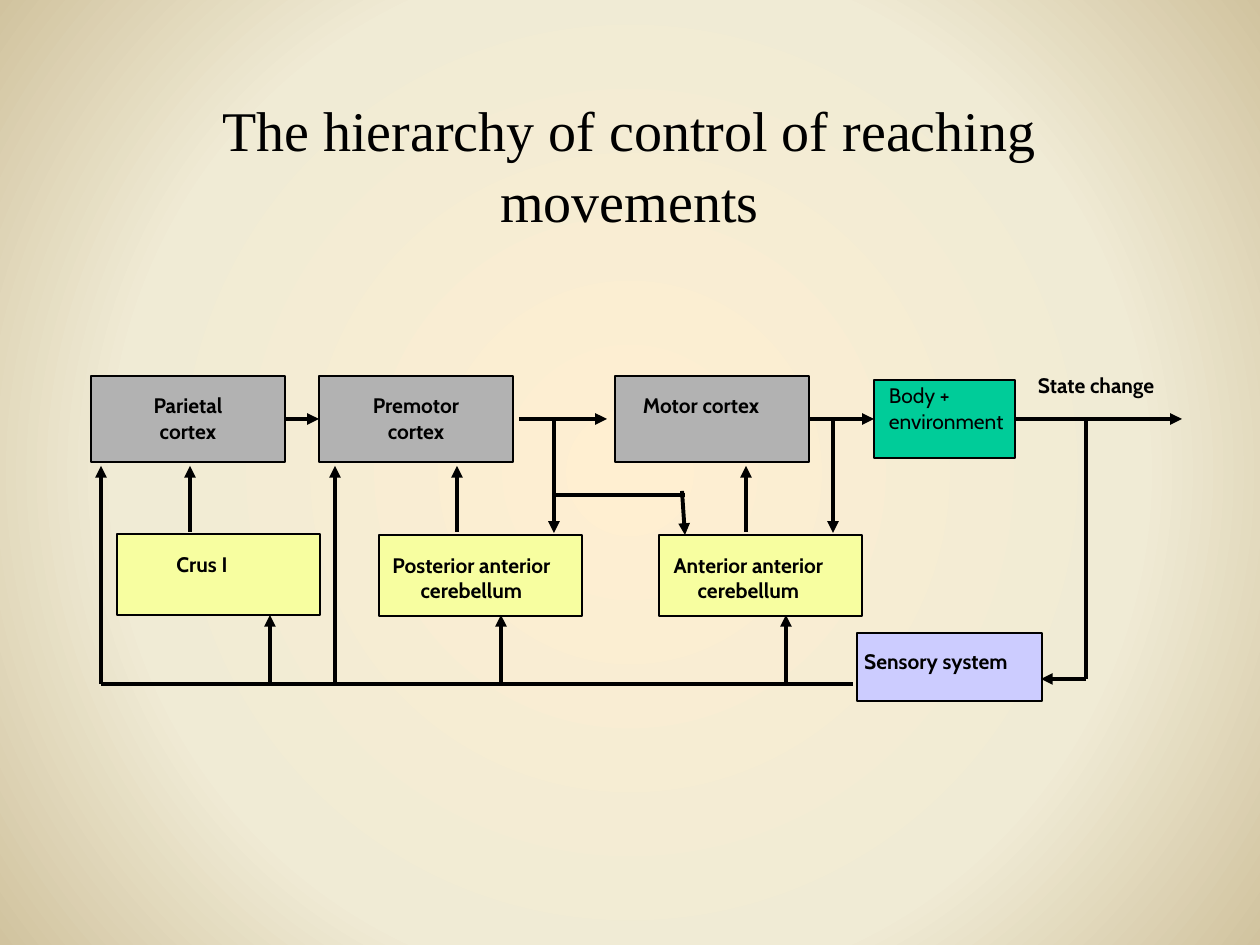
"""Build the slide on the hierarchy of control of reaching movements."""
import pptx
import pptx.dml.color
import pptx.enum.shapes
import pptx.enum.text
import pptx.oxml
import pptx.oxml.ns
import pptx.util

SCALE = 914400 / 126
THEME = {
    "ink": "000000",
    "cortex": "B2B2B2",
    "cerebellum": "F7FEA0",
    "body": "00CC99",
    "sensory": "CCCCFF",
    "backdrop": [(0, "FFEFD1"), (65, "F0EBD5"), (100, "D1C39F")],
    "title_font": "Times New Roman",
    "label_font": "Cabin",
    "title_size": 32,
    "label_size": 12,
    "outline": 0.75,
    "flow": 2.25,
}
CENTER = pptx.enum.text.PP_ALIGN.CENTER
LEFT = pptx.enum.text.PP_ALIGN.LEFT
TOP = pptx.enum.text.MSO_ANCHOR.TOP
MIDDLE = pptx.enum.text.MSO_ANCHOR.MIDDLE
TRUNK = 419
BUS = 684
NAMESPACE = pptx.oxml.ns.nsdecls("a")


def write(holder, lines, font, size, bold, align, anchor, insets):
    frame = holder.text_frame
    frame.word_wrap = True
    frame.vertical_anchor = anchor
    frame.margin_left, frame.margin_top, frame.margin_right, frame.margin_bottom = [
        round(inset * SCALE) for inset in insets
    ]
    for index, line in enumerate(lines):
        paragraph = frame.paragraphs[0] if index == 0 else frame.add_paragraph()
        paragraph.alignment = align
        run = paragraph.add_run()
        run.text = line
        run.font.name = THEME[font]
        run.font.size = pptx.util.Pt(THEME[size])
        run.font.bold = bold
        run.font.color.rgb = pptx.dml.color.RGBColor.from_string(THEME["ink"])
    return frame


def draw_flow(start, end, arrow):
    flow = slide.shapes.add_connector(
        pptx.enum.shapes.MSO_CONNECTOR.STRAIGHT,
        *[round(length * SCALE) for length in (*start, *end)],
    )
    flow.line.width = pptx.util.Pt(THEME["flow"])
    flow.line.color.rgb = pptx.dml.color.RGBColor.from_string(THEME["ink"])
    if arrow:
        flow.line._get_or_add_ln().append(
            pptx.oxml.parse_xml(f'<a:tailEnd {NAMESPACE} type="triangle"/>')
        )
    flow._element.spPr.append(pptx.oxml.parse_xml(f"<a:effectLst {NAMESPACE}/>"))
    return flow


presentation = pptx.Presentation()
presentation.slide_width = round(1260 * SCALE)
presentation.slide_height = round(945 * SCALE)
slide = presentation.slides.add_slide(presentation.slide_layouts[6])

backdrop = slide.background.fill
backdrop.solid()
backdrop.fore_color.rgb = pptx.dml.color.RGBColor.from_string(THEME["backdrop"][0][1])
stops = "".join(
    f'<a:gs pos="{position * 1000}"><a:srgbClr val="{color}"/></a:gs>'
    for position, color in THEME["backdrop"]
)
gradient = pptx.oxml.parse_xml(
    f'<a:gradFill {NAMESPACE} rotWithShape="1"><a:gsLst>{stops}</a:gsLst>'
    '<a:path path="circle"><a:fillToRect l="50000" t="50000" r="50000" b="50000"/>'
    "</a:path></a:gradFill>"
)
solid = slide.background._cSld.find(".//" + pptx.oxml.ns.qn("a:solidFill"))
solid.getparent().replace(solid, gradient)

title = slide.shapes.add_textbox(*[round(length * SCALE) for length in (94, 84, 1071, 158)])
title_frame = write(
    title, ["The hierarchy of control of reaching movements"],
    "title_font", "title_size", False, CENTER, MIDDLE, (6, 6, 6, 6),
)
title_frame.paragraphs[0].line_spacing = 1.05

stages = {}
for name, lines, kind, bounds, bold, align, insets in [
    ("parietal", ["Parietal", "cortex"], "cortex", (91, 376, 194, 86), True, CENTER, (0, 17, 0, 0)),
    ("premotor", ["Premotor", "cortex"], "cortex", (319, 376, 194, 86), True, CENTER, (0, 17, 0, 0)),
    ("motor", ["Motor cortex"], "cortex", (615, 376, 194, 86), True, CENTER, (0, 17, 22, 0)),
    ("body", ["Body +", "environment"], "body", (874, 380, 141, 78), False, LEFT, (15, 3, 0, 0)),
    ("crus", ["Crus I"], "cerebellum", (117, 534, 203, 81), True, CENTER, (0, 17, 33, 0)),
    ("posterior", ["Posterior anterior", "cerebellum"], "cerebellum",
     (379, 535, 203, 81), True, CENTER, (0, 17, 18, 0)),
    ("anterior", ["Anterior anterior", "cerebellum"], "cerebellum",
     (659, 535, 203, 81), True, CENTER, (0, 17, 24, 0)),
    ("sensory", ["Sensory system"], "sensory", (857, 633, 185, 68), True, CENTER, (0, 16, 27, 0)),
]:
    stage = slide.shapes.add_shape(
        pptx.enum.shapes.MSO_SHAPE.RECTANGLE, *[round(length * SCALE) for length in bounds]
    )
    stage.shadow.inherit = False
    stage.fill.solid()
    stage.fill.fore_color.rgb = pptx.dml.color.RGBColor.from_string(THEME[kind])
    stage.line.color.rgb = pptx.dml.color.RGBColor.from_string(THEME["ink"])
    stage.line.width = pptx.util.Pt(THEME["outline"])
    write(stage, lines, "label_font", "label_size", bold, align, TOP, insets)
    stages[name] = stage

state_change = slide.shapes.add_textbox(*[round(length * SCALE) for length in (1032, 367, 152, 37)])
write(state_change, ["State change"], "label_font", "label_size", True, LEFT, TOP, (6, 6, 6, 6))

for source, target, start_x, end_x in [
    ("parietal", "premotor", 285, 319),
    ("motor", "body", 809, 874),
    ("body", None, 1015, 1182),
]:
    command = draw_flow((start_x, TRUNK), (end_x, TRUNK), True)
    command.begin_connect(stages[source], 3)
    if target:
        command.end_connect(stages[target], 1)

for start, end, arrow in [
    ((519, TRUNK), (607, TRUNK), True),
    ((685, 495), (554, 495), False),
    ((682, 491), (685, 535), True),
    ((1086, TRUNK), (1086, 679), False),
    ((1086, 679), (1041, 679), True),
    ((853, BUS), (101, BUS), False),
]:
    draw_flow(start, end, arrow)

for columns, start_y, end_y in [
    ((554, 833), TRUNK, 533),
    ((190, 457, 746), 532, 466),
    ((270, 501, 786), BUS, 615),
    ((101, 335), BUS, 466),
]:
    for column in columns:
        draw_flow((column, start_y), (column, end_y), True)

presentation.save("out.pptx")
